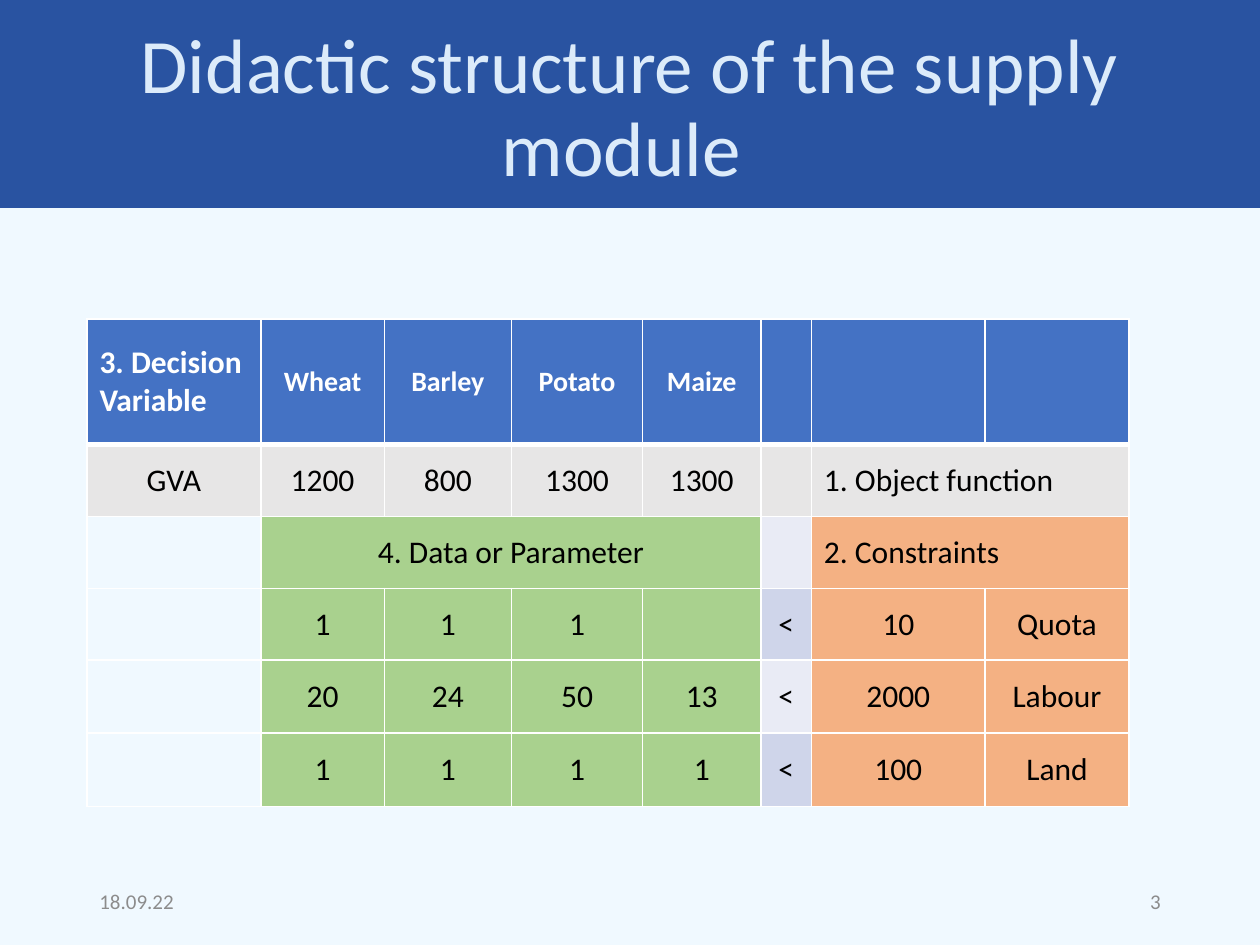
from dataclasses import dataclass

import pptx
import pptx.util
from lxml import etree
from pptx.dml.color import RGBColor
from pptx.enum.shapes import MSO_SHAPE
from pptx.enum.text import MSO_ANCHOR, PP_ALIGN
from pptx.oxml.ns import qn
from pptx.util import Inches


@dataclass(frozen=True)
class Theme:
    font: str = "Calibri"
    page: str = "F0F9FF"
    banner: str = "2953A1"
    title: str = "DCEBFA"
    muted: str = "8C8C8C"
    text: str = "000000"
    white: str = "FFFFFF"
    header: str = "4472C4"
    objective: str = "E7E6E6"
    data: str = "A9D18E"
    constraint: str = "F4B183"
    sign_light: str = "E9EBF5"
    sign_dark: str = "CFD5EA"
    title_size: int = 44
    body_size: int = 18
    crop_size: int = 16
    footer_size: int = 12


T = Theme()


def write(tf, text, size=T.body_size, color=T.text, bold=False,
          align=PP_ALIGN.CENTER, spacing=None):
    tf.word_wrap = True
    tf.vertical_anchor = MSO_ANCHOR.MIDDLE
    p = tf.paragraphs[0]
    p.alignment = align
    if spacing:
        p.line_spacing = spacing
    r = p.add_run()
    r.text = text
    r.font.name = T.font
    r.font.size = pptx.util.Pt(size)
    r.font.bold = bold
    r.font.color.rgb = RGBColor.from_string(color)


def set_borders(cell, **widths):
    """Draw white borders; widths maps L, R, T and B to points."""
    tcPr = cell._tc.get_or_add_tcPr()
    for side, width in widths.items():
        ln = etree.SubElement(tcPr, qn(f"a:ln{side}"), w=str(pptx.util.Pt(width)))
        fill = etree.SubElement(ln, qn("a:solidFill"))
        etree.SubElement(fill, qn("a:srgbClr"), val=T.white)


prs = pptx.Presentation()
prs.slide_width, prs.slide_height = Inches(10), Inches(7.5)
s = prs.slides.add_slide(prs.slide_layouts[6])
s.background.fill.solid()
s.background.fill.fore_color.rgb = RGBColor.from_string(T.page)

banner = s.shapes.add_shape(MSO_SHAPE.RECTANGLE, 0, 0, Inches(10), Inches(1.65))
banner.shadow.inherit = False
banner.fill.solid()
banner.fill.fore_color.rgb = RGBColor.from_string(T.banner)
banner.line.fill.background()

footer = dict(size=T.footer_size, color=T.muted)
for text, box, fmt in [
    ("Didactic structure of the supply module ", (0.69, 0.15, 8.62, 1.45),
     dict(size=T.title_size, color=T.title, spacing=0.9)),
    ("18.09.22", (0.69, 6.95, 2.25, 0.4), dict(align=PP_ALIGN.LEFT, **footer)),
    ("3", (7.06, 6.95, 2.25, 0.4), dict(align=PP_ALIGN.RIGHT, **footer)),
]:
    sp = s.shapes.add_textbox(*map(Inches, box))
    write(sp.text_frame, text, **fmt)

rows = [
    ["3. Decision Variable", "Wheat", "Barley", "Potato", "Maize", "", "", ""],
    ["GVA", "1200", "800", "1300", "1300", "", "1. Object function", ""],
    ["", "4. Data or Parameter", "", "", "", "", "2. Constraints", ""],
    ["", "1", "1", "1", "", "<", "10", "Quota"],
    ["", "20", "24", "50", "13", "<", "2000", "Labour"],
    ["", "1", "1", "1", "1", "<", "100", "Land"],
]
col_widths = [1.38, 0.98, 1.01, 1.04, 0.94, 0.4, 1.38, 1.14]
row_heights = [1, 0.57, 0.57, 0.57, 0.58, 0.58]
merges = [(1, 6, 7), (2, 1, 4), (2, 6, 7)]
left_aligned = {(0, 0), (1, 6), (2, 6)}

frame = s.shapes.add_table(len(rows), len(col_widths), Inches(0.69), Inches(2.53),
                           Inches(sum(col_widths)), Inches(sum(row_heights)))
table = frame.table
for col, width in zip(table.columns, col_widths):
    col.width = Inches(width)
for row, height in zip(table.rows, row_heights):
    row.height = Inches(height)
for i, first, last in merges:
    table.cell(i, first).merge(table.cell(i, last))

for i, row in enumerate(rows):
    sign = T.sign_dark if i % 2 else T.sign_light
    if i == 0:
        fills = [T.header] * 8
    elif i == 1:
        fills = [T.objective] * 8
    else:
        fills = [None] + [T.data] * 4 + [sign] + [T.constraint] * 2
    for j, (text, fill) in enumerate(zip(row, fills)):
        cell = table.cell(i, j)
        set_borders(cell, L=1, R=1, T=3 if i == 1 else 1, B=3 if i == 0 else 1)
        if fill:
            cell.fill.solid()
            cell.fill.fore_color.rgb = RGBColor.from_string(fill)
        else:
            cell.fill.background()
        cell.vertical_anchor = MSO_ANCHOR.MIDDLE
        if text:
            write(cell.text_frame, text,
                  size=T.crop_size if i == 0 and j > 0 else T.body_size,
                  color=T.white if i == 0 else T.text, bold=i == 0,
                  align=PP_ALIGN.LEFT if (i, j) in left_aligned else PP_ALIGN.CENTER)

prs.save("out.pptx")
